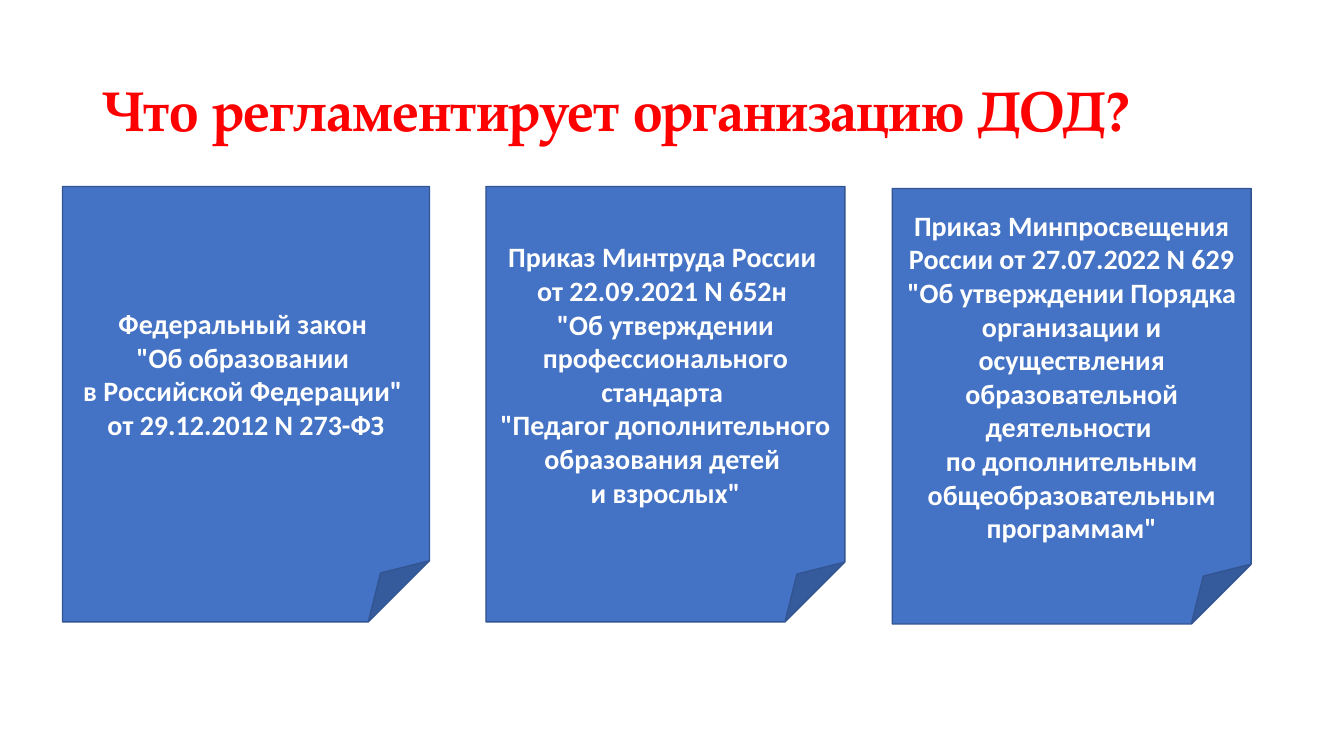
from lxml.etree import SubElement
from pptx import Presentation
from pptx.dml.color import RGBColor
from pptx.enum.shapes import MSO_SHAPE
from pptx.enum.text import MSO_ANCHOR, PP_ALIGN
from pptx.oxml.ns import qn
from pptx.util import Inches, Pt

COLORS = {
    "heading": "FF0000",
    "heading_outline": "C00000",
    "sheet": "4472C4",
    "sheet_edge": "325491",
    "sheet_text": "FFFFFF",
}


def style_run(run, font_name, size, color):
    run.font.name = font_name
    run.font.size = Pt(size)
    run.font.bold = True
    run.font.color.rgb = RGBColor.from_string(COLORS[color])


prs = Presentation()
prs.slide_width = Inches(13.33)
prs.slide_height = Inches(7.5)
slide = prs.slides.add_slide(prs.slide_layouts[6])

heading = slide.shapes.add_textbox(Inches(0.92), Inches(0.4), Inches(11.5), Inches(1.45))
heading.text_frame.word_wrap = True
heading.text_frame.vertical_anchor = MSO_ANCHOR.MIDDLE
question = heading.text_frame.paragraphs[0]
question.line_spacing = 0.9
question_run = question.add_run()
question_run.text = "Что регламентирует организацию ДОД?"
style_run(question_run, "TeX Gyre Pagella", 40, "heading")
outline = SubElement(question_run.font._element, qn("a:ln"), w=str(Pt(0.75)))
outline_fill = SubElement(outline, qn("a:solidFill"))
SubElement(outline_fill, qn("a:srgbClr"), val=COLORS["heading_outline"])
question_run.font._element.insert(0, outline)

regulations = [
    (0.62, 1.85, 3.64, [
        "Федеральный закон ",
        "\"Об образовании ",
        "в Российской Федерации\" ",
        "от 29.12.2012 N 273-ФЗ",
    ]),
    (4.82, 1.85, 3.56, [
        "Приказ Минтруда России ",
        "от 22.09.2021 N 652н ",
        "\"Об утверждении профессионального стандарта ",
        "\"Педагог дополнительного образования детей ",
        "и взрослых\"",
    ]),
    (8.85, 1.87, 3.56, [
        "Приказ Минпросвещения России от 27.07.2022 N 629 "
        "\"Об утверждении Порядка организации и осуществления "
        "образовательной деятельности ",
        "по дополнительным общеобразовательным программам\"",
    ]),
]

for left, top, width, lines in regulations:
    sheet = slide.shapes.add_shape(
        MSO_SHAPE.FOLDED_CORNER, Inches(left), Inches(top), Inches(width), Inches(4.32))
    sheet.shadow.inherit = False
    sheet.fill.solid()
    sheet.fill.fore_color.rgb = RGBColor.from_string(COLORS["sheet"])
    sheet.line.color.rgb = RGBColor.from_string(COLORS["sheet_edge"])
    sheet.line.width = Pt(1)
    sheet.text_frame.word_wrap = True
    sheet.text_frame.vertical_anchor = MSO_ANCHOR.MIDDLE
    regulation = sheet.text_frame.paragraphs[0]
    regulation.alignment = PP_ALIGN.CENTER
    for index, line in enumerate(lines):
        if index:
            regulation.add_line_break()
        line_run = regulation.add_run()
        line_run.text = line
        style_run(line_run, "Calibri", 20, "sheet_text")

prs.save("out.pptx")
